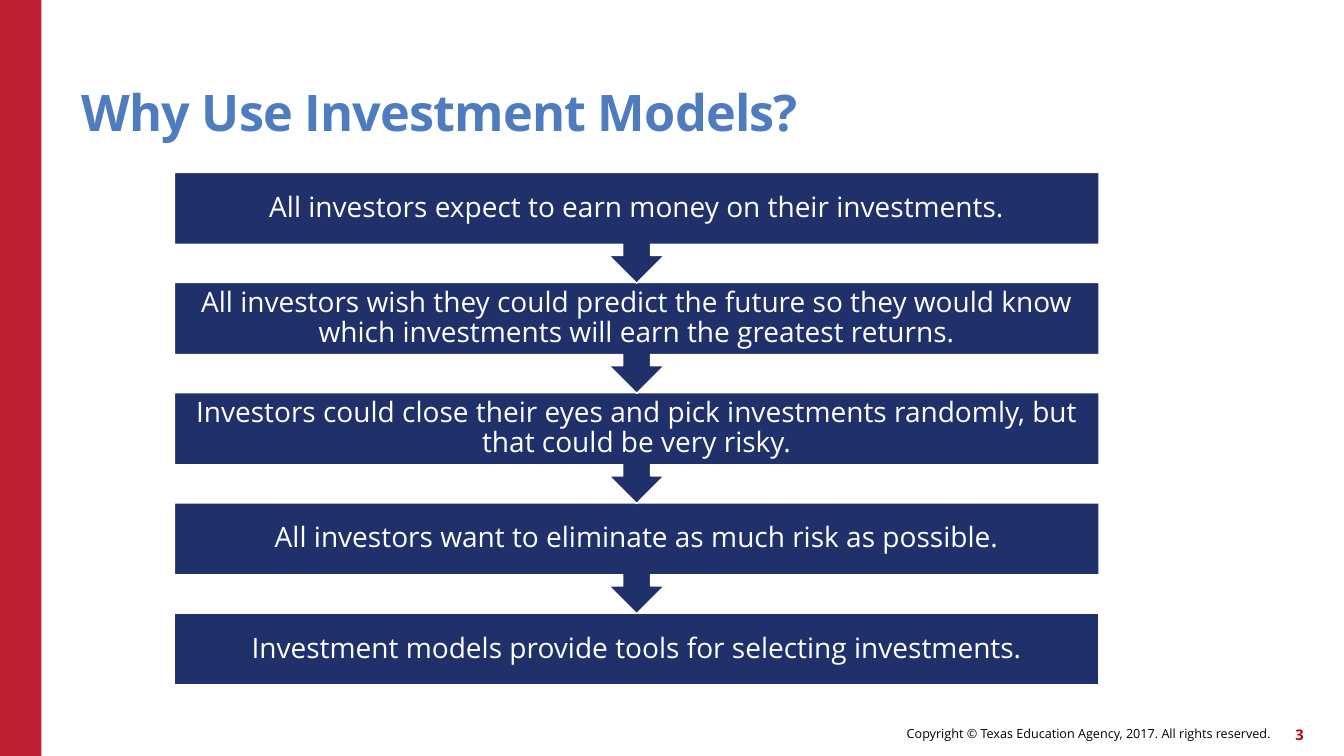
import pptx
import pptx.dml.color
import pptx.enum.shapes
import pptx.enum.text
import pptx.util

RGBColor = pptx.dml.color.RGBColor
RED = RGBColor(0xC0, 0x20, 0x33)
NUMBER_RED = RGBColor(0xC0, 0x00, 0x00)
NAVY = RGBColor(0x20, 0x30, 0x6A)
TITLE_BLUE = RGBColor(0x4E, 0x7C, 0xBE)
WHITE = RGBColor(0xFF, 0xFF, 0xFF)
BLACK = RGBColor(0x00, 0x00, 0x00)

Shape = pptx.enum.shapes.MSO_SHAPE
Anchor = pptx.enum.text.MSO_ANCHOR
Align = pptx.enum.text.PP_ALIGN

# Grid of square cells, ten to the inch
COLUMNS, ROWS = 133.3, 75
CELL = pptx.util.Inches(0.1)

STEPS = [
    "All investors expect to earn money on their investments.",
    "All investors wish they could predict the future so they would know "
    "which investments will earn the greatest returns.",
    "Investors could close their eyes and pick investments randomly, but "
    "that could be very risky.",
    "All investors want to eliminate as much risk as possible.",
    "Investment models provide tools for selecting investments.",
]
STEP_LEFT, STEP_TOP, STEP_WIDTH = 17.3, 17.1, 91.7
STEP_PITCH, BOX_HEIGHT, CALLOUT_HEIGHT = 10.93, 7.15, 11


class SlideBuilder:
    font_name = "Open Sans"

    def __init__(self, presentation):
        self.slide = presentation.slides.add_slide(presentation.slide_layouts[6])

    def place(self, *cells):
        return [round(cell * CELL) for cell in cells]

    def fill_text(self, shape, text, size, color, align, anchor, bold=False,
                  line_spacing=1.0, tracking=None, inset=0):
        frame = shape.text_frame
        frame.word_wrap = True
        frame.vertical_anchor = anchor
        frame.margin_left = frame.margin_right = round(inset * CELL)
        frame.margin_top = frame.margin_bottom = 0
        paragraph = frame.paragraphs[0]
        paragraph.alignment = align
        paragraph.line_spacing = line_spacing
        run = paragraph.add_run()
        run.text = text
        run.font.name = self.font_name
        run.font.size = pptx.util.Pt(size)
        run.font.bold = bold
        run.font.color.rgb = color
        if tracking is not None:
            run._r.get_or_add_rPr().set("spc", str(round(tracking * 100)))

    def text(self, cells, text, size, color, align, anchor, **style):
        box = self.slide.shapes.add_textbox(*self.place(*cells))
        self.fill_text(box, text, size, color, align, anchor, **style)

    def block(self, cells, fill, kind=Shape.RECTANGLE, outline=None):
        shape = self.slide.shapes.add_shape(kind, *self.place(*cells))
        shape.shadow.inherit = False
        shape.fill.solid()
        shape.fill.fore_color.rgb = fill
        if outline is None:
            shape.line.fill.background()
        else:
            shape.line.color.rgb = outline
            shape.line.width = pptx.util.Pt(1)
        return shape

    def step(self, cells, text, kind):
        shape = self.block(cells, NAVY, kind, outline=WHITE)
        self.fill_text(shape, text, 20, WHITE, Align.CENTER, Anchor.MIDDLE,
                       line_spacing=0.9, inset=1.6)


def main():
    presentation = pptx.Presentation()
    presentation.slide_width = round(COLUMNS * CELL)
    presentation.slide_height = ROWS * CELL
    builder = SlideBuilder(presentation)

    # Side band and footer
    builder.block((0, 0, 4.1, ROWS), RED)
    builder.text((61.4, 71.2, 64.6, 3.2),
                 "Copyright © Texas Education Agency, 2017. All rights reserved.",
                 9, BLACK, Align.RIGHT, Anchor.MIDDLE)
    builder.text((125.1, 71.3, 4.2, 3.2), "3", 10.5, NUMBER_RED,
                 Align.RIGHT, Anchor.MIDDLE, bold=True)

    # Title
    builder.text((8.1, 4.5, 110, 9.6), "Why Use Investment Models?", 36,
                 TITLE_BLUE, Align.LEFT, Anchor.BOTTOM, bold=True,
                 line_spacing=0.9, tracking=-0.6)

    # Chain of steps, stacked from the bottom so each arrow tip stays on top
    last = len(STEPS) - 1
    for index, text in reversed(list(enumerate(STEPS))):
        kind, height = Shape.DOWN_ARROW_CALLOUT, CALLOUT_HEIGHT
        if index == last:
            kind, height = Shape.RECTANGLE, BOX_HEIGHT
        top = STEP_TOP + index * STEP_PITCH
        builder.step((STEP_LEFT, top, STEP_WIDTH, height), text, kind)

    presentation.save("out.pptx")


if __name__ == "__main__":
    main()
